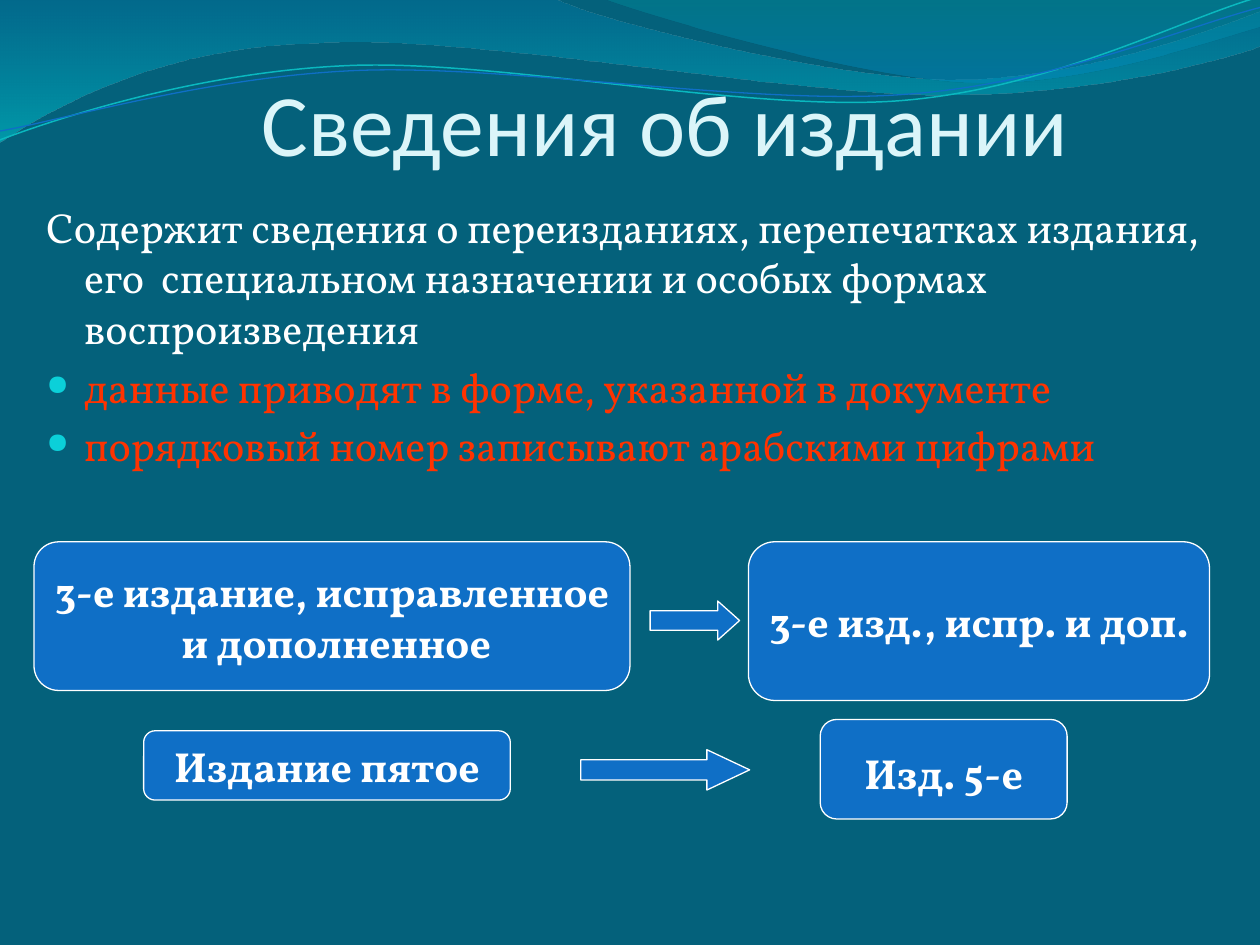
from math import cos, radians, sin
from lxml.etree import SubElement
from pptx import Presentation
from pptx.dml.color import RGBColor as RGB
from pptx.enum.shapes import MSO_SHAPE as SHAPE
from pptx.enum.text import MSO_ANCHOR as ANCHOR, PP_ALIGN as ALIGN
from pptx.oxml.ns import qn
from pptx.util import Inches, Pt

# Content
W, H = 10, 7.5
COLORS = dict(bg="04617B", title="DBF5F9", white="FFFFFF", red="FF3300",
              bullet="0BD0D9", blue="0F6FC6", teal="0AB8BF")
TITLE = "Сведения об издании"
BODY = [  # text, colour, bulleted
    ("Содержит сведения о переизданиях, перепечатках издания, его  специальном "
     "назначении и особых формах воcпроизведения", "white", False),
    ("данные приводят в форме, указанной в документе", "red", True),
    ("порядковый номер записывают арабскими цифрами", "red", True),
]
BOXES = [  # lines, place, top inset
    (["3-е издание, исправленное", " и дополненное"], (0.27, 4.3, 4.73, 1.18), 0.05),
    (["3-е изд., испр. и доп."], (5.94, 4.3, 3.66, 1.26), 0.05),
    (["Издание пятое"], (1.14, 5.8, 2.91, 0.55), 0.05),
    (["Изд. 5-е"], (6.51, 5.71, 1.96, 0.79), 0.11),
]
ARROWS = [((5.16, 4.77, 0.71, 0.31), 0.56), ((4.61, 5.95, 1.34, 0.32), 1.06)]

# Waves: start, then 2 numbers for a straight edge or 6 for a Bezier curve
BANDS = [  # outline, gradient stops (position, colour, opacity %)
    ([(0, 0), (4.4, -0.01), (4.76, 0.17, 6.64, 0.63, 7.58, 0.63),
      (8.53, 0.63, 9.58, 0.26, 10, 0.09), (10.01, 0.36),
      (9.83, 0.44, 8.7, 0.76, 7.46, 0.75), (6.22, 0.75, 3.82, 0.28, 2.57, 0.34),
      (1.29, 0.36, 0.46, 0.83, -0.01, 1.13)],
     [(0, "0074A1", 45), (1, "00C6CF", 55)]),
    ([(4.79, -0.01), (5.09, 0.11, 6.82, 0.62, 7.69, 0.65),
      (8.56, 0.69, 9.61, 0.32, 10, 0.21), (10, 0)],
     [(0, "00A1A9", 30), (0.8, "008BBF", 45)]),
]
TILT = 2.7  # degrees the strands are turned counter-clockwise
STRANDS = [  # outline, centre of the turn, colour, width
    ([(0, 1.11), (0.48, 0.93, 1.58, 0.57, 2.77, 0.52),
      (3.95, 0.47, 5.93, 0.89, 7.13, 0.8), (8.33, 0.71, 9.38, 0.15, 9.98, -0.02)],
     (4.99, 0.58), "teal", 0.85),
    ([(0, 1.04), (0.47, 0.96, 1.64, 0.61, 2.83, 0.56),
      (4.03, 0.51, 5.97, 0.84, 7.17, 0.75), (8.36, 0.67, 9.41, 0.21, 10, 0.06)],
     (5, 0.59), "blue", 0.75),
]


def rgb(name):
    return RGB.from_string(COLORS[name])


def set_attrs(obj, **values):
    for key, value in values.items():
        setattr(obj, key, value)


def level(pt, centre):
    """Position of a strand's point before the strand is tilted."""
    a, dx, dy = radians(TILT), pt[0] - centre[0], pt[1] - centre[1]
    return (centre[0] + dx * cos(a) - dy * sin(a),
            centre[1] + dx * sin(a) + dy * cos(a))


def add_wave(outline, close, centre=None):
    pts = [seg[k:k + 2] for seg in outline for k in range(0, len(seg), 2)]
    if centre:
        pts = [level(pt, centre) for pt in pts]
    pts = [(Inches(x), Inches(y)) for x, y in pts]
    fb = s.shapes.build_freeform(*pts[0])
    fb.add_line_segments(pts[1:], close=close)
    sp = fb.convert_to_shape()
    # Join the three points of each curve into one Bezier segment
    edges = iter(list(sp._element.iter(qn("a:lnTo"))))
    for seg in outline[1:]:
        edge = next(edges)
        if len(seg) == 6:
            edge.tag = qn("a:cubicBezTo")
            for other in (next(edges), next(edges)):
                edge.append(other[0])
                other.getparent().remove(other)
    if centre:
        sp.rotation = 360 - TILT
    sp.shadow.inherit = False
    return sp


def add_block(kind, place):
    sp = s.shapes.add_shape(kind, *map(Inches, place))
    sp.shadow.inherit = False
    sp.fill.solid()
    sp.fill.fore_color.rgb = rgb("blue")
    sp.line.color.rgb = rgb("white")
    sp.line.width = Pt(0.75)
    return sp


def add_text_box(place, **frame):
    tf = s.shapes.add_textbox(*map(Inches, place)).text_frame
    set_attrs(tf, word_wrap=True, **frame)
    return tf


def write(tf, i, text, color, align, **font):
    p = tf.add_paragraph() if i else tf.paragraphs[0]
    p.alignment = align
    r = p.add_run()
    r.text = text
    set_attrs(r.font, **font)
    r.font.color.rgb = rgb(color)
    return p


def add_bullet(pPr):
    SubElement(SubElement(pPr, qn("a:buClr")), qn("a:srgbClr"), val=COLORS["bullet"])
    SubElement(pPr, qn("a:buSzPct"), val="68000")
    SubElement(pPr, qn("a:buChar"), char="●")


prs = Presentation()
prs.slide_width, prs.slide_height = Inches(W), Inches(H)
s = prs.slides.add_slide(prs.slide_layouts[6])
s.background.fill.solid()
s.background.fill.fore_color.rgb = rgb("bg")

# Waves along the top
for outline, stops in BANDS:
    sp = add_wave(outline, True)
    sp.line.fill.background()
    sp.fill.gradient()
    sp.fill.gradient_angle = 270
    for stop, (pos, color, opacity) in zip(sp.fill.gradient_stops, stops):
        stop.position = pos
        stop.color.rgb = RGB.from_string(color)
        clr = stop._gs.find(qn("a:srgbClr"))
        SubElement(clr, qn("a:alpha"), val=str(opacity * 1000))
for outline, centre, color, width in STRANDS:
    sp = add_wave(outline, False, centre)
    sp.fill.background()
    sp.line.color.rgb = rgb(color)
    sp.line.width = Pt(width)

# Title and body
tf = add_text_box((0.78, 0.13, 9, 1.25), vertical_anchor=ANCHOR.BOTTOM,
                  margin_left=0, margin_right=0, margin_bottom=0)
write(tf, 0, TITLE, "title", ALIGN.CENTER, name="Calibri", size=Pt(50))

TEXT = dict(name="Vollkorn", size=Pt(24))
tf = add_text_box((0.27, 1.55, 9.37, 5.95))
for i, (text, color, bulleted) in enumerate(BODY):
    p = write(tf, i, text, color, ALIGN.LEFT, **TEXT)
    p.space_before = Pt(4.8)
    pPr = p._p.get_or_add_pPr()
    pPr.set("marL", str(Inches(0.3)))
    pPr.set("indent", str(Inches(-0.3)))
    if bulleted:
        add_bullet(pPr)

# Examples: full wording, arrow, short form
for lines, place, top in BOXES:
    tf = add_block(SHAPE.FLOWCHART_ALTERNATE_PROCESS, place).text_frame
    set_attrs(tf, word_wrap=False, vertical_anchor=ANCHOR.MIDDLE,
              margin_top=Inches(top))
    for i, line in enumerate(lines):
        write(tf, i, line, "white", ALIGN.CENTER, bold=True, **TEXT)
for place, head in ARROWS:
    add_block(SHAPE.RIGHT_ARROW, place).adjustments[1] = head

prs.save("out.pptx")
